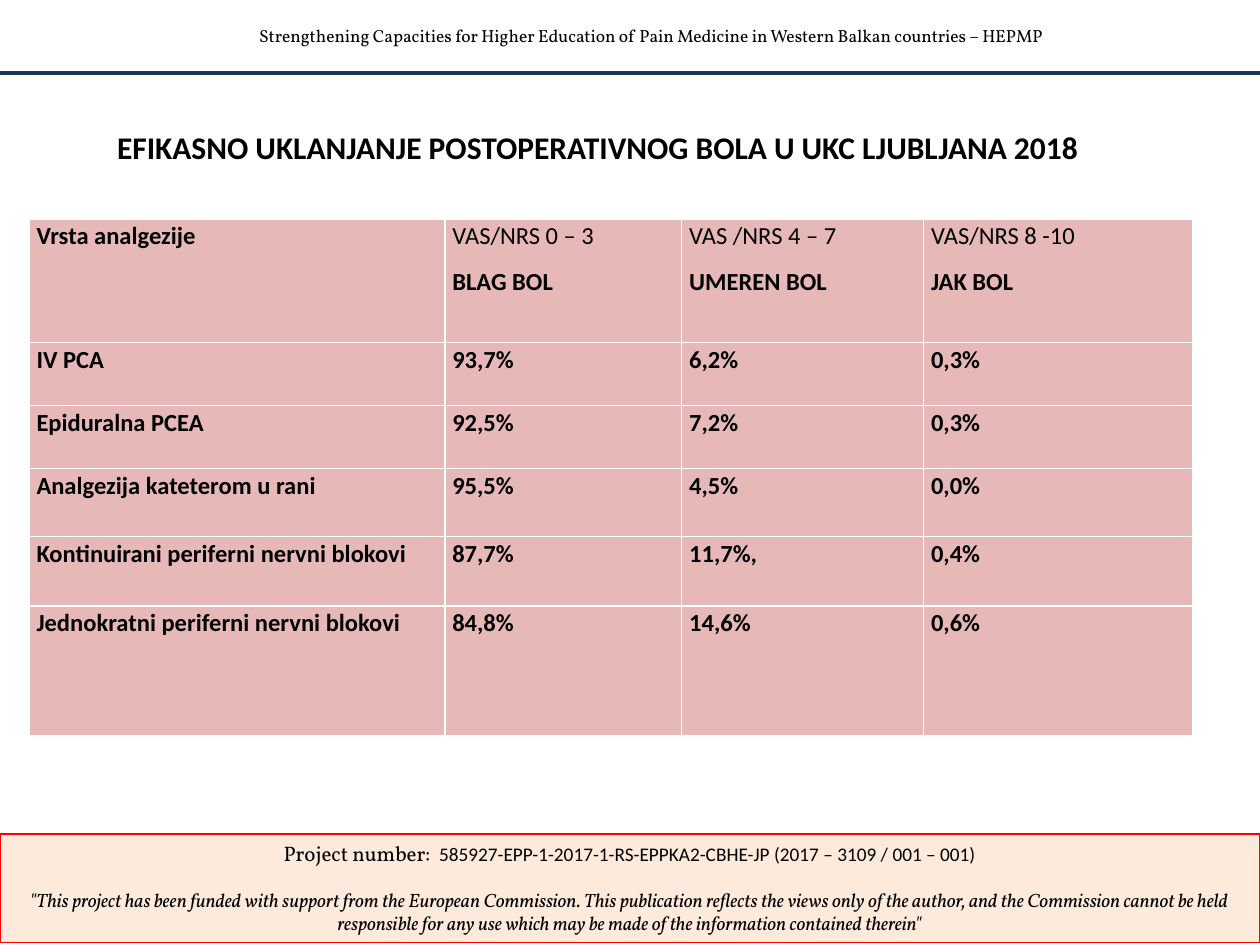
from lxml.etree import SubElement
from pptx import Presentation
from pptx.dml.color import RGBColor
from pptx.enum.shapes import MSO_CONNECTOR, MSO_SHAPE
from pptx.enum.text import MSO_ANCHOR, PP_ALIGN
from pptx.oxml.ns import qn
from pptx.util import Inches, Pt

BODY, SERIF = "Calibri", "Vollkorn"
BLACK, WHITE, NAVY, RED = "000000", "FFFFFF", "17375E", "FF0000"
PINK, CREAM = "E6B9B8", "FDEADA"

COLUMNS = [3.3, 1.88, 1.92, 2.14]
ROW_HEIGHTS = [0.98, 0.5, 0.5, 0.54, 0.55, 1.03]
HEADERS = [
    ["Vrsta analgezije"],
    ["VAS/NRS 0 – 3", "BLAG BOL"],
    ["VAS /NRS 4 – 7", "UMEREN BOL"],
    ["VAS/NRS 8 -10", "JAK BOL"],
]
RESULTS = [
    ["IV PCA", "93,7%", "6,2%", "0,3%"],
    ["Epiduralna PCEA", "92,5%", "7,2%", "0,3%"],
    ["Analgezija kateterom u rani", "95,5%", "4,5%", "0,0%"],
    ["Kontinuirani periferni nervni blokovi", "87,7%", "11,7%,", "0,4%"],
    ["Jednokratni periferni nervni blokovi", "84,8%", "14,6%", "0,6%"],
]


def rgb(value):
    return RGBColor.from_string(value)


def set_font(font, size, name, bold=False, italic=False):
    font.size, font.name = Pt(size), name
    font.bold, font.italic = bold, italic
    font.color.rgb = rgb(BLACK)


def set_borders(cell, color, width):
    """Draw the same line on all four sides; call before filling the cell."""
    tcPr = cell._tc.get_or_add_tcPr()
    for side in ("lnL", "lnR", "lnT", "lnB"):
        ln = SubElement(tcPr, qn(f"a:{side}"), w=str(Pt(width)))
        fill = SubElement(ln, qn("a:solidFill"))
        SubElement(fill, qn("a:srgbClr"), val=color)


class SlideBuilder:
    def __init__(self, slide):
        self.s = slide

    def text(self, box, text, size, name, bold=False, top_inset=0.05,
             anchor=MSO_ANCHOR.TOP):
        sp = self.s.shapes.add_textbox(*map(Inches, box))
        tf = sp.text_frame
        tf.word_wrap = True
        tf.margin_top = Inches(top_inset)
        tf.vertical_anchor = anchor
        p = tf.paragraphs[0]
        p.text = text
        p.alignment = PP_ALIGN.CENTER
        set_font(p.font, size, name, bold)

    def rule(self, y, color, width):
        line = self.s.shapes.add_connector(
            MSO_CONNECTOR.STRAIGHT, 0, Inches(y), Inches(10), Inches(y))
        line.line.color.rgb = rgb(color)
        line.line.width = Pt(width)
        SubElement(line._element.spPr, qn("a:effectLst"))

    def footer(self, box, label, number, disclaimer):
        sp = self.s.shapes.add_shape(MSO_SHAPE.RECTANGLE, *map(Inches, box))
        sp.shadow.inherit = False
        sp.fill.solid()
        sp.fill.fore_color.rgb = rgb(CREAM)
        sp.line.color.rgb = rgb(RED)
        sp.line.width = Pt(0.75)
        tf = sp.text_frame
        tf.word_wrap = True
        tf.vertical_anchor = MSO_ANCHOR.TOP
        p = tf.paragraphs[0]
        p.alignment = PP_ALIGN.CENTER
        for text, size, name in ((label, 12, SERIF), (number, 11, BODY)):
            r = p.add_run()
            r.text = text
            set_font(r.font, size, name)
        p = tf.add_paragraph()
        p.text = disclaimer
        p.alignment = PP_ALIGN.CENTER
        p.space_before = Pt(13.2)
        set_font(p.font, 11, SERIF, italic=True)

    def cell(self, cell, lines):
        """Fill a cell; when it has two lines, only the last is bold."""
        set_borders(cell, WHITE, 1)
        cell.fill.solid()
        cell.fill.fore_color.rgb = rgb(PINK)
        cell.margin_left = cell.margin_right = Inches(0.06)
        cell.margin_top = cell.margin_bottom = 0
        tf = cell.text_frame
        tf.text = "\n".join(lines)
        for p in tf.paragraphs:
            p.alignment = PP_ALIGN.JUSTIFY
            p.line_spacing = 1.07
            p.space_after = Pt(8)
            set_font(p.font, 14, BODY, bold=p.text == lines[-1])

    def table(self, left, top, widths, heights, rows):
        table = self.s.shapes.add_table(
            len(rows), len(widths), Inches(left), Inches(top),
            Inches(sum(widths)), Inches(sum(heights))).table
        for column, width in zip(table.columns, widths):
            column.width = Inches(width)
        for row, height, contents in zip(table.rows, heights, rows):
            row.height = Inches(height)
            for cell, lines in zip(row.cells, contents):
                self.cell(cell, lines)


def main():
    prs = Presentation()
    prs.slide_width, prs.slide_height = Inches(10), Inches(7.5)
    slide = SlideBuilder(prs.slides.add_slide(prs.slide_layouts[6]))

    slide.footer(
        (0, 6.62, 10, 0.86), "Project number:\u00a0 ".replace("\u00a0", " "),
        "585927-EPP-1-2017-1-RS-EPPKA2-CBHE-JP (2017 – 3109 / 001 – 001)",
        '"This project has been funded with support from the European '
        "Commission. This publication reflects the views only of the author, "
        "and the Commission cannot be held responsible for any use which may "
        'be made of the information contained therein"')
    slide.rule(0.58, NAVY, 2)
    slide.text((1.83, 0.15, 6.67, 0.27),
               "Strengthening Capacities for Higher Education of Pain Medicine "
               "in Western Balkan countries – HEPMP", 10, SERIF)
    slide.text((0.23, 0.2, 9.03, 1.66),
               "EFIKASNO UKLANJANJE POSTOPERATIVNOG BOLA U UKC LJUBLJANA 2018",
               18, BODY, bold=True, top_inset=0.32, anchor=MSO_ANCHOR.MIDDLE)
    rows = [HEADERS] + [[[value] for value in row] for row in RESULTS]
    slide.table(0.23, 1.74, COLUMNS, ROW_HEIGHTS, rows)

    prs.save("out.pptx")


if __name__ == "__main__":
    main()
